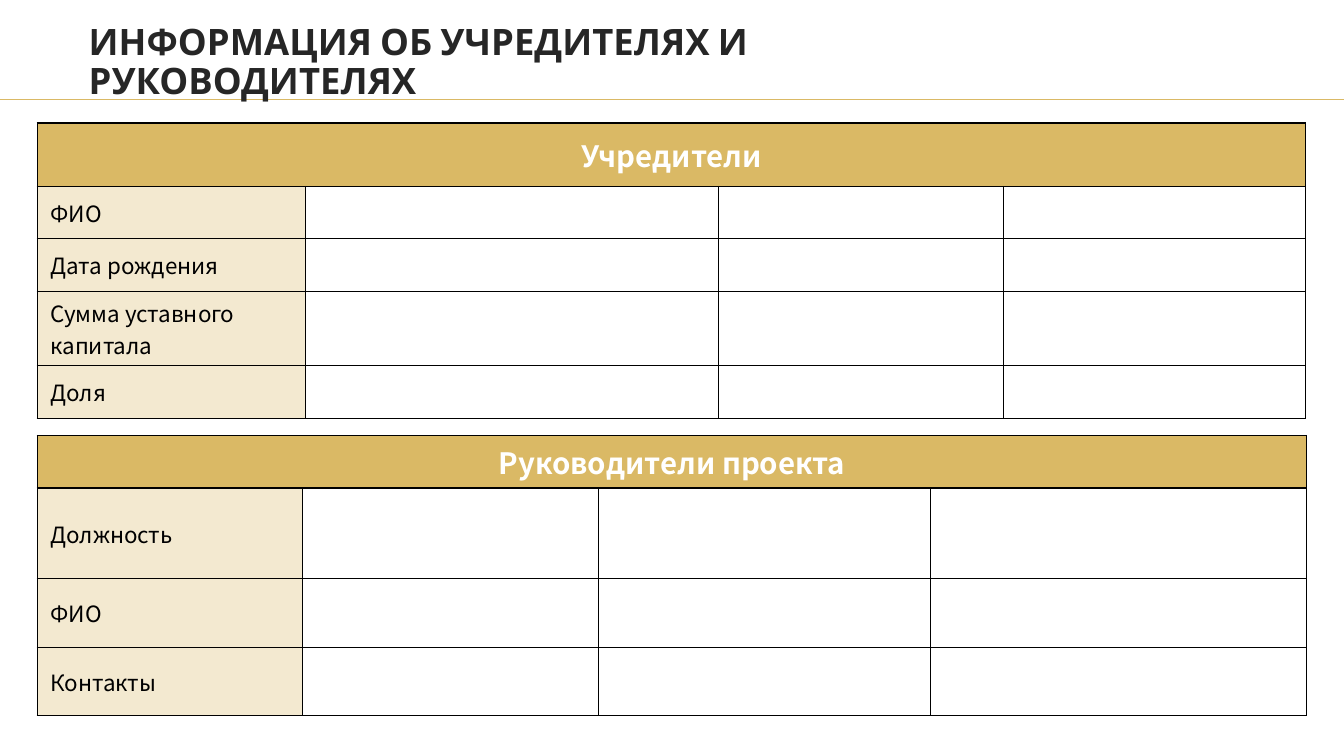
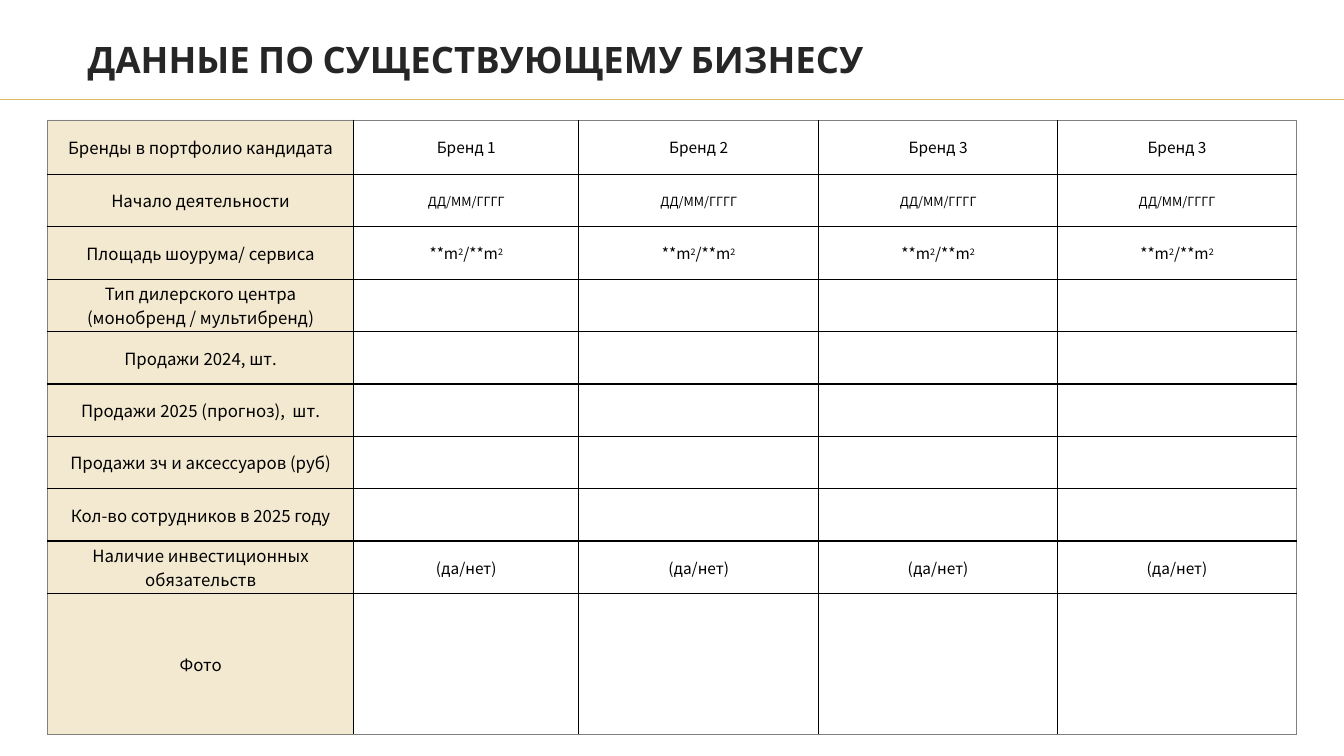
from lxml.etree import SubElement
from pptx import Presentation
from pptx.dml.color import RGBColor
from pptx.enum.shapes import MSO_CONNECTOR
from pptx.enum.text import MSO_ANCHOR, MSO_AUTO_SIZE, PP_ALIGN
from pptx.oxml import parse_xml
from pptx.oxml.ns import nsdecls, qn
from pptx.util import Pt

PX = 9144  # one px is a hundredth of an inch
SLIDE_WIDTH, SLIDE_HEIGHT = 1333, 750
COLORS = {"gold": "DAB965", "title": "262626", "black": "000000",
          "white": "FFFFFF", "grey": "808080"}
TITLE_FONT, TABLE_FONT = "Cabin", "Noto Sans CJK SC"
TINT_ALPHA = "30000"


def write_text(frame, text, size, font=TABLE_FONT, color="black", bold=False,
               align=PP_ALIGN.LEFT, line_spacing=None):
    """Lines are split at newlines; text between ^ marks is superscript."""
    for line_index, line in enumerate(text.split("\n")):
        paragraph = frame.add_paragraph() if line_index else frame.paragraphs[0]
        paragraph.alignment = align
        paragraph.line_spacing = line_spacing
        for part_index, part in enumerate(line.split("^")):
            if not part:
                continue
            run = paragraph.add_run()
            run.text = part
            run.font.name = font
            run.font.size = Pt(size)
            run.font.bold = bold
            run.font.color.rgb = RGBColor.from_string(COLORS[color])
            if part_index % 2:
                run._r.get_or_add_rPr().set("baseline", "30000")


def add_form(slide, left, top, widths, heights, rows, label_size, label_inset,
             value_inset=(10, 0), align=PP_ALIGN.LEFT, header=None,
             outer=("black", 1)):
    """Rows are (label, values, value size); the label column is tinted."""
    shape = slide.shapes.add_table(
        len(heights), len(widths), left * PX, top * PX,
        sum(widths) * PX, sum(heights) * PX)
    table = shape.table
    table.first_row = table.horz_banding = False
    for column, width in zip(table.columns, widths):
        column.width = width * PX
    for row, height in zip(table.rows, heights):
        row.height = height * PX

    last_row, last_column = len(heights) - 1, len(widths) - 1
    first_body_row = 1 if header else 0
    if header:
        table.cell(0, 0).merge(table.cell(0, last_column))

    for r in range(len(heights)):
        for c in range(len(widths)):
            cell = table.cell(r, c)
            in_header, is_label = r < first_body_row, c == 0
            inset_x, inset_y = label_inset if is_label else value_inset
            cell.margin_left = cell.margin_right = inset_x * PX
            cell.margin_top = cell.margin_bottom = inset_y * PX
            cell.vertical_anchor = MSO_ANCHOR.MIDDLE

            # Fill
            cell.fill.solid()
            fill_name = "gold" if in_header or is_label else "white"
            cell.fill.fore_color.rgb = RGBColor.from_string(COLORS[fill_name])
            properties = cell._tc.get_or_add_tcPr()
            if is_label and not in_header:
                fill_color = properties.find(qn("a:solidFill"))[0]
                SubElement(fill_color, qn("a:alpha")).set("val", TINT_ALPHA)

            # Borders
            edges = {"lnL": c == 0, "lnR": c == last_column,
                     "lnT": r == 0, "lnB": r == last_row}
            for index, (tag, is_outer) in enumerate(edges.items()):
                name, points = outer if is_outer else ("black", 1)
                properties.insert(index, parse_xml(
                    f'<a:{tag} {nsdecls("a")} w="{int(Pt(points))}"><a:solidFill>'
                    f'<a:srgbClr val="{COLORS[name]}"/></a:solidFill></a:{tag}>'))

            # Text
            if in_header:
                if is_label:
                    write_text(cell.text_frame, header, 21, color="white",
                               bold=True, align=PP_ALIGN.CENTER)
                continue
            label, values, value_size = rows[r - first_body_row]
            if is_label:
                write_text(cell.text_frame, label, label_size, align=align)
            elif values:
                write_text(cell.text_frame, values[c - 1], value_size, align=align)


presentation = Presentation()
presentation.slide_width = SLIDE_WIDTH * PX
presentation.slide_height = SLIDE_HEIGHT * PX
layout = presentation.slide_layouts[5]  # Title Only

# Titles
titles = [
    ("ИНФОРМАЦИЯ ОБ УЧРЕДИТЕЛЯХ И РУКОВОДИТЕЛЯХ", (78, 31, 915, 63)),
    ("ДАННЫЕ ПО СУЩЕСТВУЮЩЕМУ БИЗНЕСУ", (77, 30, 1218, 62)),
]
for text, box in titles:
    title = presentation.slides.add_slide(layout).shapes.title
    title.left, title.top, title.width, title.height = [side * PX for side in box]
    title.text_frame.word_wrap = True
    title.text_frame.auto_size = MSO_AUTO_SIZE.NONE
    title.text_frame.vertical_anchor = MSO_ANCHOR.MIDDLE
    write_text(title.text_frame, text, 26, font=TITLE_FONT, color="title",
               bold=True, line_spacing=0.9)
people_slide, business_slide = presentation.slides

# Rule under the title, moved to the layout that both slides share
rule = people_slide.shapes.add_connector(
    MSO_CONNECTOR.STRAIGHT, 0, 99 * PX, SLIDE_WIDTH * PX, 99 * PX)
rule.line.color.rgb = RGBColor.from_string(COLORS["gold"])
rule.line.width = Pt(0.5)
SubElement(rule.element.spPr, qn("a:effectLst"))
layout.shapes.element.append(rule.element)

# Slide 1: founders and project managers
people_forms = [
    ("Учредители", 122, [266, 410, 282, 300], [63, 52, 52, 52, 52],
     ["ФИО", "Дата рождения", "Сумма уставного капитала", "Доля"]),
    ("Руководители проекта", 432, [263, 294, 329, 373], [52, 90, 68, 68],
     ["Должность", "ФИО", "Контакты"]),
]
for header, top, widths, heights, labels in people_forms:
    add_form(people_slide, 37, top, widths, heights,
             [(label, [], 16) for label in labels],
             label_size=16, label_inset=(13, 5), header=header)

# Slide 2: current business by brand
business_rows = [
    ("Бренды в портфолио кандидата",
     ["Бренд 1", "Бренд 2", "Бренд 3", "Бренд 3"], 11),
    ("Начало деятельности", ["ДД/ММ/ГГГГ"] * 4, 9),
    ("Площадь шоурума/ сервиса", ["**m^2^/**m^2^"] * 4, 11),
    ("Тип дилерского центра\n(монобренд / мультибренд)", [], 11),
    ("Продажи 2024, шт.", [], 11),
    ("Продажи 2025 (прогноз),  шт.", [], 11),
    ("Продажи зч и аксессуаров (руб)", [], 11),
    ("Кол-во сотрудников в 2025 году", [], 11),
    ("Наличие инвестиционных обязательств", ["(да/нет)"] * 4, 11),
    ("Фото", [], 11),
]
add_form(business_slide, 47, 119, [304, 223, 238, 237, 237],
         [54] + [52] * 8 + [140], business_rows, label_size=12,
         label_inset=(0, 0), align=PP_ALIGN.CENTER, outer=("grey", 0.75))

presentation.save("out.pptx")
